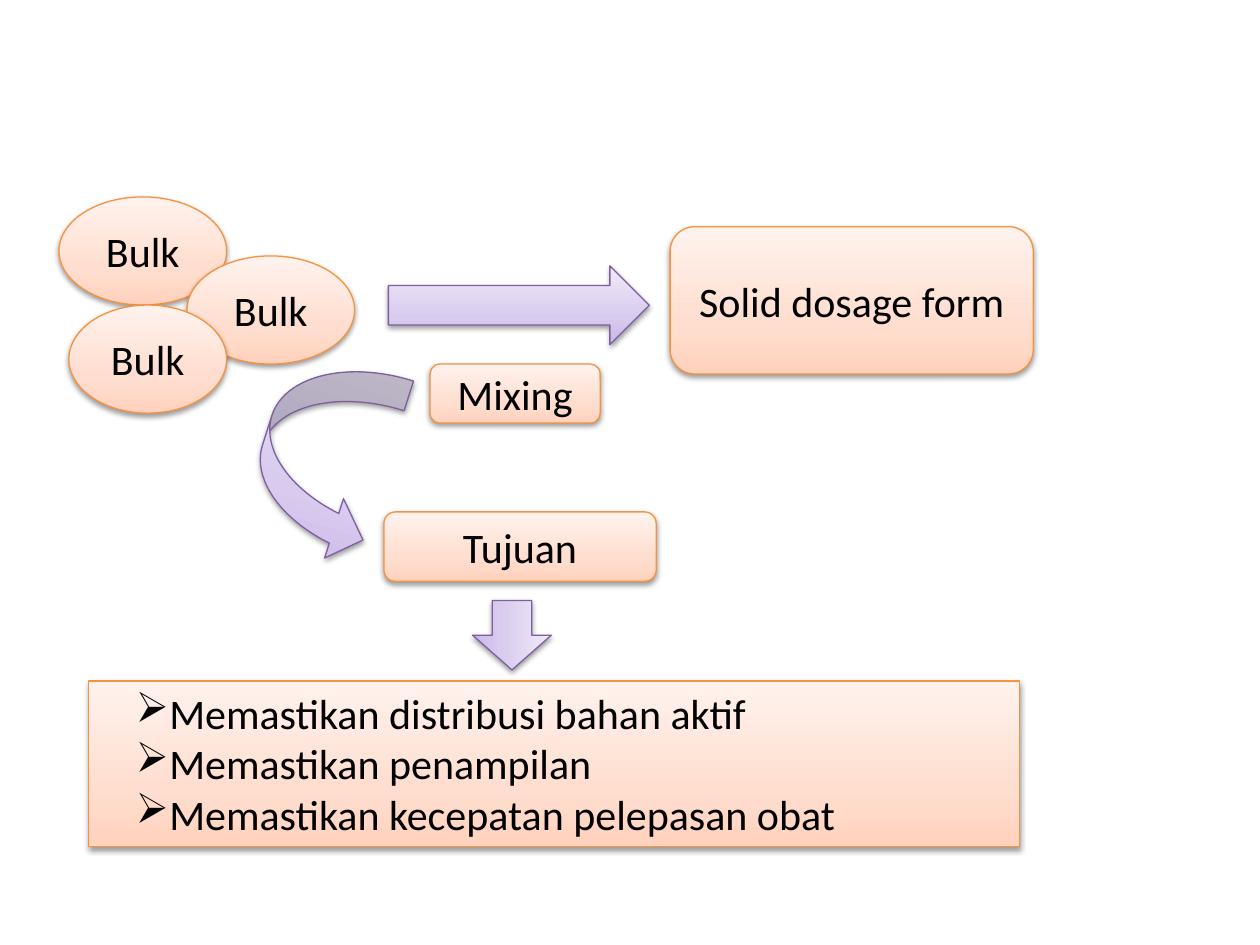
from copy import deepcopy
from lxml import etree
from pptx import Presentation
from pptx import util as u
from pptx.dml.color import RGBColor
from pptx.enum import shapes, text
from pptx.oxml.ns import qn

KIND = shapes.MSO_SHAPE
HUES = {
    "text": "000000",
    "peach": ("FFD2BD", "FFDED0", "FFF2ED"),
    "orange": "F69240",
    "lilac": ("C9B5E8", "D8CBEE", "F0EAF9"),
    "purple": "7D60A0",
}


def rgb(name):
    return RGBColor.from_string(name)


class Board:
    font, size, width = "Calibri", u.Pt(24), u.Pt(0.75)
    stops = (0, 0.35, 1)

    def __init__(self, slide):
        self.slide = slide

    def shape(self, kind, box, fill, line):
        item = self.slide.shapes.add_shape(kind, *[u.Cm(n) for n in box])
        self.shade(item, HUES[fill])
        item.line.color.rgb = rgb(HUES[line])
        item.line.width = self.width
        self.shadow(item)
        return item

    def shade(self, item, tones):
        item.fill.gradient()
        item.fill.gradient_angle = 90
        stops = item._element.spPr.find(".//" + qn("a:gsLst"))
        stops.append(deepcopy(stops[0]))
        for stop, tone, place in zip(item.fill.gradient_stops, tones, self.stops):
            stop.color.rgb = rgb(tone)
            stop.position = place

    def shadow(self, item):
        item.shadow.inherit = False
        effects = item._element.spPr.find(qn("a:effectLst"))
        outer = etree.SubElement(effects, qn("a:outerShdw"), blurRad="40000",
                                 dist="20000", dir="5400000", rotWithShape="0")
        tone = etree.SubElement(outer, qn("a:srgbClr"), val="000000")
        etree.SubElement(tone, qn("a:alpha"), val="38000")

    def style(self, para, align):
        para.alignment = align
        for run in para.runs:
            run.font.name, run.font.size = self.font, self.size
            run.font.color.rgb = rgb(HUES["text"])

    def label(self, kind, words, *box):
        item = self.shape(kind, box, "peach", "orange")
        item.text_frame.text = words
        self.style(item.text_frame.paragraphs[0], text.PP_ALIGN.CENTER)

    def arrow(self, kind, *box, turn=0):
        self.shape(kind, box, "lilac", "purple").rotation = turn

    def points(self, lines, *box):
        frame = self.shape(KIND.RECTANGLE, box, "peach", "orange").text_frame
        frame.text = "\n".join(lines)
        frame.vertical_anchor = text.MSO_ANCHOR.TOP
        frame.auto_size = text.MSO_AUTO_SIZE.SHAPE_TO_FIT_TEXT
        for para in frame.paragraphs:
            para.level = 1
            props = para._p.get_or_add_pPr()
            props.set("marL", str(u.Cm(0.71)))
            props.set("indent", "0")
            etree.SubElement(props, qn("a:buFont"), typeface="Wingdings",
                             pitchFamily="2", charset="2")
            etree.SubElement(props, qn("a:buChar"), char="Ø")
            self.style(para, text.PP_ALIGN.LEFT)


def main():
    deck = Presentation()
    deck.slide_width, deck.slide_height = u.Cm(25.4), u.Cm(19.05)
    board = Board(deck.slides.add_slide(deck.slide_layouts[6]))

    # Bulk materials
    for left, top, width in ((1.19, 3.97, 3.38), (3.77, 5.16, 3.38), (1.39, 6.15, 3.18)):
        board.label(KIND.OVAL, "Bulk", left, top, width, 2.18)

    # Mixing into the dosage form
    board.arrow(KIND.RIGHT_ARROW, 7.83, 5.36, 5.26, 1.59)
    board.label(KIND.ROUNDED_RECTANGLE, "Solid dosage form", 13.51, 4.57, 7.32, 2.97)
    board.label(KIND.ROUNDED_RECTANGLE, "Mixing", 8.67, 7.34, 3.43, 1.19)

    # Purpose of mixing
    board.arrow(KIND.CURVED_RIGHT_ARROW, 5.28, 7.21, 2.51, 3.99, turn=17.6)
    board.label(KIND.ROUNDED_RECTANGLE, "Tujuan", 7.74, 10.32, 5.49, 1.4)
    board.points(("Memastikan distribusi bahan aktif",
                  "Memastikan penampilan",
                  "Memastikan kecepatan pelepasan obat"),
                 1.78, 13.73, 18.78, 3.33)
    board.arrow(KIND.RIGHT_ARROW, 9.62, 12.01, 1.4, 1.59, turn=90)

    deck.save("out.pptx")


if __name__ == "__main__":
    main()
